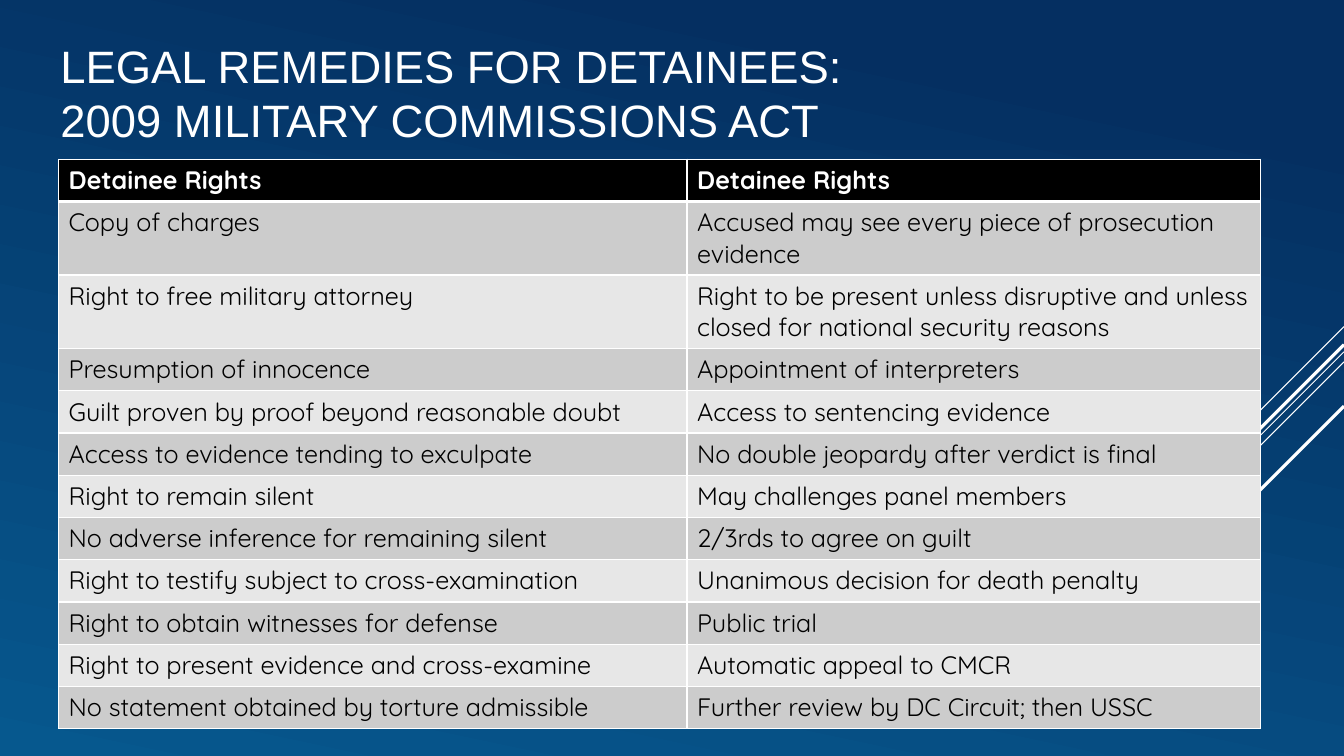
from lxml import etree
from pptx import Presentation
from pptx import util as u
from pptx.dml.color import RGBColor
from pptx.enum import shapes, text
from pptx.oxml.ns import qn

WIDTH, HEIGHT = 13.33, 7.5
WHITE, BLACK = "FFFFFF", "000000"
BANDS = ("CCCCCC", "E7E7E7")

RIGHTS = [
    ("Detainee Rights", "Detainee Rights"),
    ("Copy of charges", "Accused may see every piece of prosecution evidence"),
    ("Right to free military attorney",
     "Right to be present unless disruptive and unless closed for national security reasons"),
    ("Presumption of innocence", "Appointment of interpreters"),
    ("Guilt proven by proof beyond reasonable doubt", "Access to sentencing evidence"),
    ("Access to evidence tending to exculpate", "No double jeopardy after verdict is final"),
    ("Right to remain silent", "May challenges panel members"),
    ("No adverse inference for remaining silent", "2/3rds to agree on guilt"),
    ("Right to testify subject to cross-examination", "Unanimous decision for death penalty"),
    ("Right to obtain witnesses for defense", "Public trial"),
    ("Right to present evidence and cross-examine", "Automatic appeal to CMCR"),
    ("No statement obtained by torture admissible", "Further review by DC Circuit; then USSC"),
]
TWO_LINE_ROWS = (1, 2)
COLUMN_SHARES = (0.523, 0.477)

# Diagonal rays: start height on the right edge, run to the left, line width
RAYS = [(3.24, 1, 0.75), (3.49, 3.26, 0.75), (3.59, 2.08, 0.75),
        (3.42, 1.91, 2.25), (4.03, 1.39, 2.25)]


def color(value):
    return RGBColor.from_string(value)


def style(paragraph, font, size, tint, bold=False):
    paragraph.font.name = font
    paragraph.font.size = u.Pt(size)
    paragraph.font.color.rgb = color(tint)
    paragraph.font.bold = bold


def paint_background(slide):
    fill = slide.background.fill
    fill.gradient()
    fill.gradient_angle = 258
    for stop, position, tint in zip(fill.gradient_stops, (0.13, 1), ("052F61", "06588E")):
        stop.position = position
        stop.color.rgb = color(tint)


def draw_rays(slide):
    for top, run, weight in RAYS:
        ray = slide.shapes.add_connector(
            shapes.MSO_CONNECTOR.STRAIGHT, u.Inches(WIDTH), u.Inches(top),
            u.Inches(WIDTH - run), u.Inches(top + run))
        ray.line.color.rgb = color(WHITE)
        ray.line.width = u.Pt(weight)
        etree.SubElement(ray._element.spPr, qn("a:effectLst"))


def place_title(slide, left, top, width, height):
    title = slide.shapes.title
    title.left, title.top, title.width, title.height = map(u.Inches, (left, top, width, height))
    frame = title.text_frame
    frame.text = "LEGAL REMEDIES FOR DETAINEES:\v2009 MILITARY COMMISSIONS ACT"
    frame.word_wrap = True
    frame.auto_size = text.MSO_AUTO_SIZE.NONE
    frame.vertical_anchor = text.MSO_ANCHOR.MIDDLE
    heading = frame.paragraphs[0]
    heading.alignment = text.PP_ALIGN.LEFT
    heading.line_spacing = u.Pt(38.6)
    style(heading, "Arial", 32.4, WHITE)


def add_border(cell, side, weight):
    border = etree.SubElement(cell._tc.get_or_add_tcPr(), qn(f"a:ln{side}"), w=str(u.Pt(weight)))
    fill = etree.SubElement(border, qn("a:solidFill"))
    etree.SubElement(fill, qn("a:srgbClr"), val=WHITE)


def place_rights(slide, left, top, width, height):
    line_count = len(RIGHTS)
    tall = 0.73
    short = (height - tall * len(TWO_LINE_ROWS)) / (line_count - len(TWO_LINE_ROWS))
    table = slide.shapes.add_table(
        line_count, 2, *map(u.Inches, (left, top, width, height))).table
    for column, share in zip(table.columns, COLUMN_SHARES):
        column.width = u.Inches(width * share)
    for row, rights in enumerate(RIGHTS):
        header = row == 0
        table.rows[row].height = u.Inches(tall if row in TWO_LINE_ROWS else short)
        for column, right in enumerate(rights):
            cell = table.cell(row, column)
            cell.text = right
            style(cell.text_frame.paragraphs[0], "Quicksand", 18,
                  WHITE if header else BLACK, header)
            # Thick rule between the header and the first row
            weights = {"L": 1, "R": 1, "T": 3 if row == 1 else 1, "B": 3 if header else 1}
            for side, weight in weights.items():
                add_border(cell, side, weight)
            cell.fill.solid()
            cell.fill.fore_color.rgb = color(BLACK if header else BANDS[(row - 1) % 2])


def main():
    deck = Presentation()
    deck.slide_width, deck.slide_height = u.Inches(WIDTH), u.Inches(HEIGHT)
    slide = deck.slides.add_slide(deck.slide_layouts[5])
    paint_background(slide)
    draw_rays(slide)
    place_title(slide, 0.5, 0.33, 12.25, 1.17)
    place_rights(slide, 0.58, 1.58, 11.92, 5.65)
    deck.save("out.pptx")


if __name__ == "__main__":
    main()
